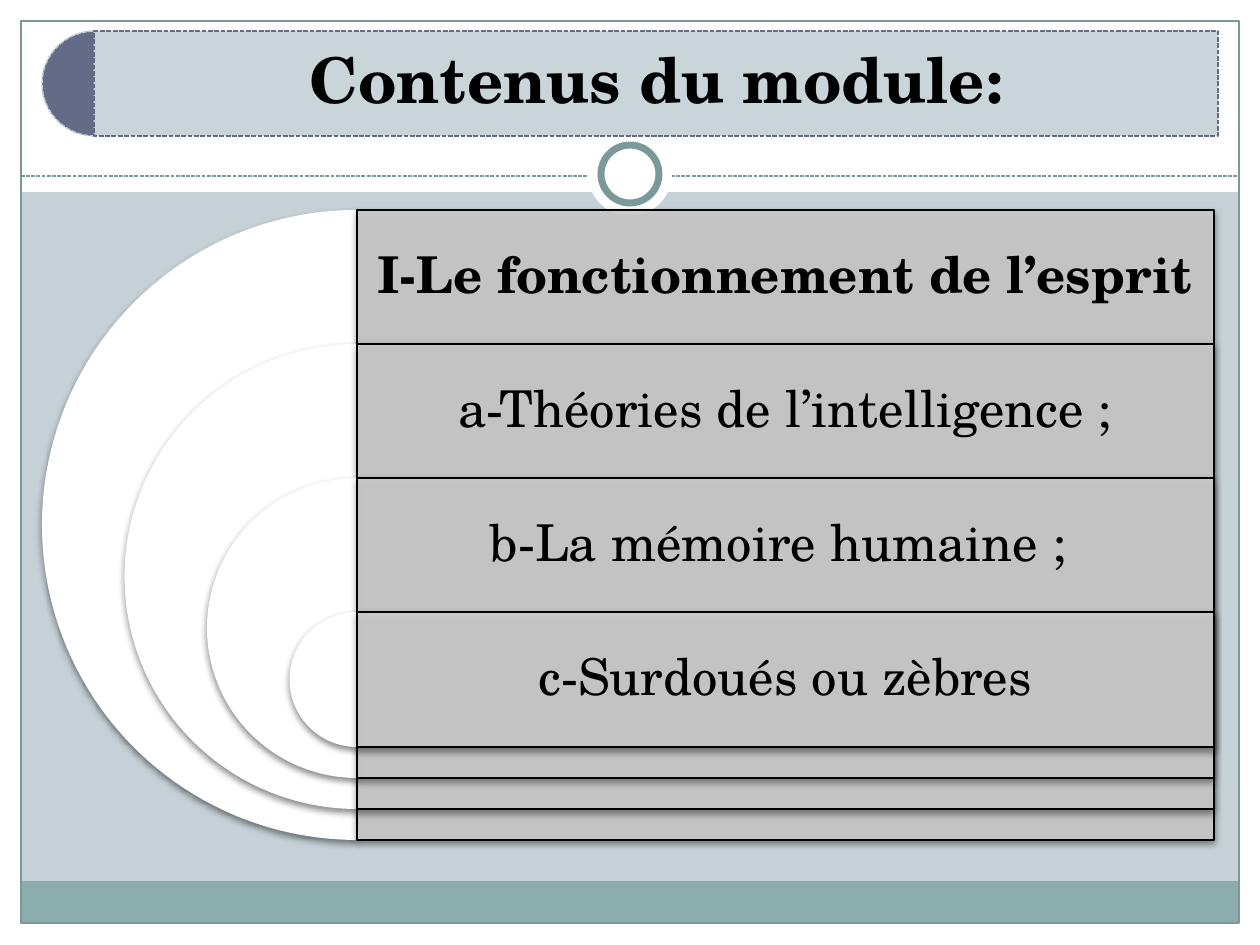
from lxml.etree import SubElement
from pptx import Presentation
from pptx.dml.color import RGBColor
from pptx.enum.dml import MSO_LINE as Dash
from pptx.enum.shapes import MSO_CONNECTOR as Connector, MSO_SHAPE as Shape
from pptx.enum.text import MSO_ANCHOR as Anchor, PP_ALIGN as Align
from pptx.oxml import parse_xml
from pptx.oxml.ns import nsdecls, qn
from pptx.util import Pt

SCALE = 914400 / 126
FONT = "TeX Gyre Schola"
COLORS = {
    "background": "C5D1D7",
    "white": "FFFFFF",
    "footer": "8CADAE",
    "frame": "7C999A",
    "slate": "646B86",
    "gray": "CCCCCC",
    "black": "000000",
}
SHADOW = (
    f'<a:effectLst {nsdecls("a")}><a:outerShdw blurRad="{Pt(4)}" dist="{Pt(2)}" '
    'dir="5400000" algn="ctr" rotWithShape="0">'
    f'<a:srgbClr val="{COLORS["black"]}"><a:alpha val="45000"/></a:srgbClr>'
    "</a:outerShdw></a:effectLst>"
)


def draw(kind, bounds, fill=None, line=None, width=0.75, dash=None, alpha=None, shadow=False):
    shape = slide.shapes.add_shape(kind, *[round(n * SCALE) for n in bounds])
    shape.shadow.inherit = False
    if fill:
        shape.fill.solid()
        shape.fill.fore_color.rgb = RGBColor.from_string(COLORS[fill])
    else:
        shape.fill.background()
    if line:
        shape.line.color.rgb = RGBColor.from_string(COLORS[line])
        shape.line.width = Pt(width)
        if dash:
            shape.line.dash_style = dash
    else:
        shape.line.fill.background()
    properties = shape._element.spPr
    if alpha:
        color = properties.find(qn("a:solidFill")).find(qn("a:srgbClr"))
        SubElement(color, qn("a:alpha"), val=str(alpha * 1000))
    if shadow:
        properties.replace(properties.find(qn("a:effectLst")), parse_xml(SHADOW))
    if kind == Shape.PIE:
        shape.adjustments[0] = 54
        shape.adjustments[1] = 162
    return shape


def write(box, bounds, text, size, bold, inset):
    box.left, box.top, box.width, box.height = [round(n * SCALE) for n in bounds]
    frame = box.text_frame
    frame.word_wrap = True
    frame.vertical_anchor = Anchor.MIDDLE
    frame.margin_left = frame.margin_right = round(inset * SCALE)
    frame.margin_top = frame.margin_bottom = round(inset * SCALE)
    para = frame.paragraphs[0]
    para.alignment = Align.CENTER
    para.line_spacing = 0.9
    span = para.add_run()
    span.text = text
    span.font.name = FONT
    span.font.size = Pt(size)
    span.font.bold = bold
    span.font.color.rgb = RGBColor.from_string(COLORS["black"])


deck = Presentation()
deck.slide_width = round(1260 * SCALE)
deck.slide_height = round(945 * SCALE)
slide = deck.slides.add_slide(deck.slide_layouts[5])
slide.background.fill.solid()
slide.background.fill.fore_color.rgb = RGBColor.from_string(COLORS["background"])

for margin in [(0, 924, 1260, 21), (0, 0, 1260, 192), (0, 0, 21, 945), (1239, 0, 21, 945)]:
    draw(Shape.RECTANGLE, margin, "white")
draw(Shape.RECTANGLE, (21, 881, 1217, 43), "footer")
draw(Shape.RECTANGLE, (21, 21, 1218, 902), line="frame")

divider = slide.shapes.add_connector(
    Connector.STRAIGHT, *[round(n * SCALE) for n in (21, 176, 1239, 176)]
)
divider.line.color.rgb = RGBColor.from_string(COLORS["frame"])
divider.line.width = Pt(0.75)
divider.line.dash_style = Dash.SQUARE_DOT
SubElement(divider._element.spPr, qn("a:effectLst"))
draw(Shape.OVAL, (588, 132, 84, 84), "white")
draw(Shape.OVAL, (601, 145, 58, 58), "white", "frame", 4)

band = (94, 31, 1124, 105)
draw(Shape.PIE, (42, 31, 105, 105), "slate", "background", 0.9, Dash.SQUARE_DOT)
draw(Shape.RECTANGLE, band, "background", "slate", 0.9, Dash.SQUARE_DOT, 90)
title = slide.shapes.title
write(title, band, "Contenus du module:", 36, True, 19)
slide.shapes._spTree.append(title._element)

LEFT, TOP, WIDTH, ROW = 357, 210, 857, 134
topics = [
    "I-Le fonctionnement de l’esprit",
    "a-Théories de l’intelligence ;",
    "b-La mémoire humaine ; ",
    "c-Surdoués ou zèbres",
]
for index, topic in enumerate(topics):
    top = TOP + index * ROW
    size = 630 - index * 165
    draw(Shape.PIE, (LEFT - size / 2, top, size, size), "white", shadow=True)
    draw(Shape.RECTANGLE, (LEFT, top, WIDTH, size), "gray", "black", alpha=90, shadow=True)
    box = slide.shapes.add_textbox(0, 0, 0, 0)
    write(box, (LEFT, top, WIDTH, ROW), topic, 29, index == 0, 15)

deck.save("out.pptx")
